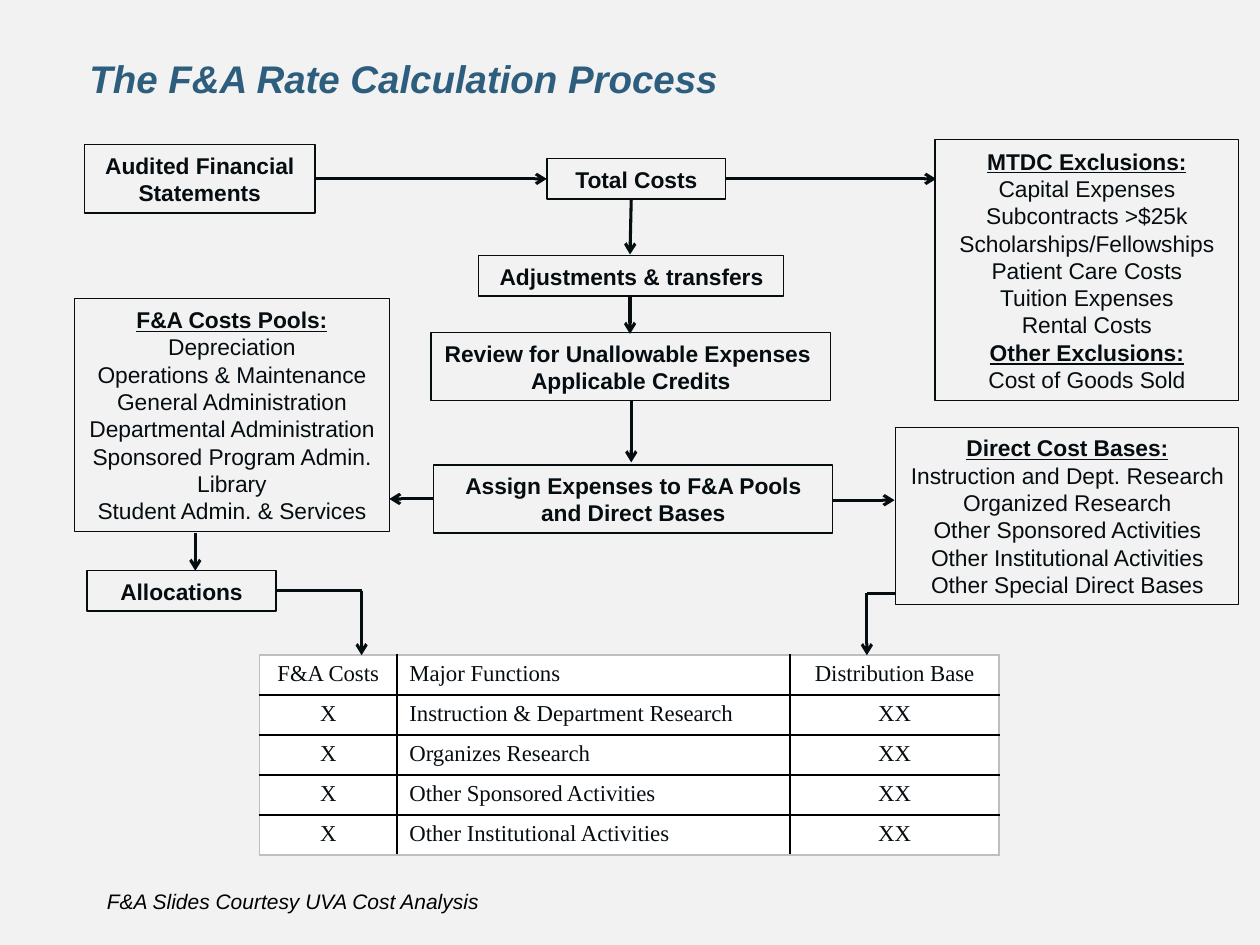
from lxml import etree
from pptx import Presentation
from pptx.dml.color import RGBColor
from pptx.enum.shapes import MSO_CONNECTOR, MSO_SHAPE
from pptx.enum.text import MSO_ANCHOR, MSO_AUTO_SIZE, PP_ALIGN
from pptx.oxml.ns import qn
from pptx.util import Inches, Pt

RECT, STRAIGHT = MSO_SHAPE.RECTANGLE, MSO_CONNECTOR.STRAIGHT
LEFT, CENTER, MIDDLE = PP_ALIGN.LEFT, PP_ALIGN.CENTER, MSO_ANCHOR.MIDDLE
NO_FIT = MSO_AUTO_SIZE.NONE
INK, PAPER, TITLE, BLACK, WHITE, GRID = (
    "060D11", "F2F2F2", "2E5E7D", "000000", "FFFFFF", "BFBFBF")

STEPS = [
    ((0.67, 1.15, 1.83, 0.54), ["Audited Financial Statements"]),
    ((4.34, 1.26, 1.42, 0.32), ["Total Costs"]),
    ((3.8, 2.03, 2.42, 0.32), ["Adjustments & transfers"]),
    ((3.42, 2.64, 3.17, 0.54),
     ["Review for Unallowable Expenses ", "Applicable Credits"]),
    ((3.44, 3.69, 3.17, 0.54),
     ["Assign Expenses to F&A Pools and Direct Bases"]),
    ((0.69, 4.53, 1.5, 0.32), ["Allocations"]),
]
LISTS = [
    ((7.42, 1.11, 2.41, 2.07),
     ["MTDC Exclusions:", "Capital Expenses", "Subcontracts >$25k",
      "Scholarships/Fellowships", "Patient Care Costs", "Tuition Expenses",
      "Rental Costs", "Other Exclusions:", "Cost of Goods Sold"]),
    ((0.59, 2.37, 2.5, 1.85),
     ["F&A Costs Pools:", "Depreciation", "Operations & Maintenance",
      "General Administration", "Departmental Administration",
      "Sponsored Program Admin.", "Library", "Student Admin. & Services"]),
    ((7.11, 3.39, 2.72, 1.41),
     ["Direct Cost Bases:", "Instruction and Dept. Research",
      "Organized Research", "Other Sponsored Activities",
      "Other Institutional Activities", "Other Special Direct Bases"]),
]
ROUTES = [
    [(2.51, 1.42), (4.34, 1.42)],
    [(5.76, 1.42), (7.43, 1.42)],
    [(5.01, 1.58), (5, 2.02)],
    [(5, 2.35), (5, 2.65)],
    [(5.01, 3.18), (5.01, 3.67)],
    [(6.61, 3.97), (7.1, 3.97)],
    [(3.44, 3.96), (3.09, 3.96)],
    [(1.55, 4.23), (1.55, 4.53)],
    [(2.19, 4.69), (2.87, 4.69), (2.87, 5.2)],
    [(7.11, 4.71), (6.88, 4.71), (6.88, 5.2)],
]
FUNCTIONS = ["Instruction & Department Research", "Organizes Research",
             "Other Sponsored Activities", "Other Institutional Activities"]
ROWS = [("F&A Costs", "Major Functions", "Distribution Base")]
ROWS += [("X", name, "XX") for name in FUNCTIONS]
COLS, ROW_H = (1.09, 3.12, 1.66), 0.317


def rgb(color):
    """Turn a hex string into a colour."""
    return RGBColor.from_string(color)


def style(p, size, color, font="Arial", bold=False, italic=False,
          underline=False, align=LEFT):
    """Format a paragraph and its runs."""
    p.alignment = align
    for r in p.runs:
        f = r.font
        f.size, f.name, f.bold, f.italic = Pt(size), font, bold, italic
        f.underline = underline
        f.color.rgb = rgb(color)


def add_title(slide, text):
    """Place and fill the title placeholder."""
    sp = slide.shapes.title
    sp.left, sp.top, sp.width, sp.height = map(Inches, (0.71, 0.33, 7.08, 0.58))
    tf = sp.text_frame
    tf.text = text
    tf.auto_size, tf.vertical_anchor = NO_FIT, MIDDLE
    tf.margin_left = tf.margin_right = 0
    style(tf.paragraphs[0], 22, TITLE, bold=True, italic=True)


def add_box(slide, place, lines, is_list=False):
    """Add an outlined box; in a list, lines ending in a colon are headings."""
    sp = slide.shapes.add_shape(RECT, *map(Inches, place))
    sp.shadow.inherit = False
    sp.fill.background()
    sp.line.color.rgb = rgb(INK)
    sp.line.width = Pt(0.75)
    tf = sp.text_frame
    tf.word_wrap, tf.vertical_anchor = True, MIDDLE
    tf.text = "\n".join(lines)
    for p in tf.paragraphs:
        heading = is_list and p.text.endswith(":")
        style(p, 13, INK, bold=heading or not is_list, underline=heading,
              align=CENTER)


def add_route(slide, points):
    """Join points with lines, with an arrowhead on the last one."""
    for start, end in zip(points, points[1:]):
        line = slide.shapes.add_connector(STRAIGHT, *map(Inches, start + end))
        line.line.color.rgb = rgb(INK)
        line.line.width = Pt(1.75)
        if end == points[-1]:
            etree.SubElement(line.line._get_or_add_ln(), qn("a:tailEnd"),
                             type="arrow")
        etree.SubElement(line._element.spPr, qn("a:effectLst"))


def set_borders(cell, sides):
    """Draw cell borders from (side, colour) pairs in schema order."""
    tc_pr = cell._tc.get_or_add_tcPr()
    for i, (side, color) in enumerate(sides):
        ln = etree.Element(qn("a:ln" + side), w=str(Pt(1)))
        fill = etree.SubElement(ln, qn("a:solidFill"))
        etree.SubElement(fill, qn("a:srgbClr"), val=color)
        tc_pr.insert(i, ln)


def add_rates_table(slide):
    """Add the table of costs, functions and bases."""
    place = (2.06, 5.2, sum(COLS), ROW_H * len(ROWS))
    table = slide.shapes.add_table(len(ROWS), len(COLS),
                                   *map(Inches, place)).table
    table.first_row = table.horz_banding = False
    for col, width in zip(table.columns, COLS):
        col.width = Inches(width)
    last_row, last_col = len(ROWS) - 1, len(COLS) - 1
    for i, row in enumerate(ROWS):
        for j, text in enumerate(row):
            cell = table.cell(i, j)
            cell.text = text
            cell.fill.solid()
            cell.fill.fore_color.rgb = rgb(WHITE)
            style(cell.text_frame.paragraphs[0], 13, INK, "Times New Roman",
                  align=LEFT if j == 1 else CENTER)
            outer = (("L", j == 0), ("R", j == last_col),
                     ("T", i == 0), ("B", i == last_row))
            set_borders(cell, [(side, GRID if edge else BLACK)
                               for side, edge in outer])


def add_credit(slide, text):
    """Add the credit line at the foot."""
    sp = slide.shapes.add_textbox(*map(Inches, (0.75, 7, 3.67, 0.3)))
    tf = sp.text_frame
    tf.word_wrap = True
    tf.text = text
    style(tf.paragraphs[0], 12, BLACK, italic=True)


def main():
    """Build and save the slide."""
    prs = Presentation()
    prs.slide_width, prs.slide_height = Inches(10), Inches(7.5)
    slide = prs.slides.add_slide(prs.slide_layouts[5])
    slide.background.fill.solid()
    slide.background.fill.fore_color.rgb = rgb(PAPER)
    add_title(slide, "The F&A Rate Calculation Process")
    for place, lines in STEPS:
        add_box(slide, place, lines)
    for place, lines in LISTS:
        add_box(slide, place, lines, is_list=True)
    add_rates_table(slide)
    for points in ROUTES:
        add_route(slide, points)
    add_credit(slide, "F&A Slides Courtesy UVA Cost Analysis")
    prs.save("out.pptx")


if __name__ == "__main__":
    main()
